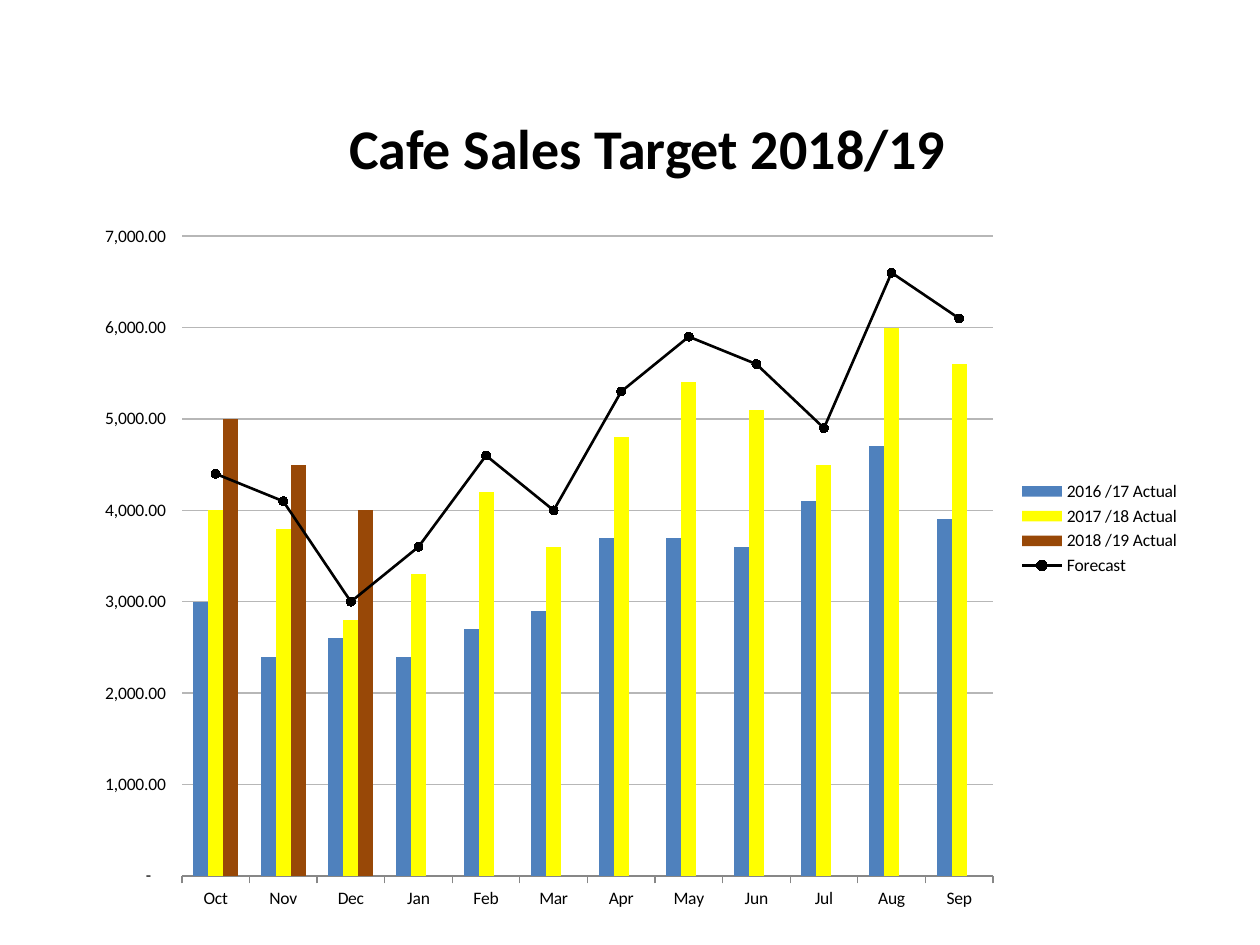
from lxml import etree
from pptx import Presentation
from pptx.chart.data import CategoryChartData
from pptx.dml.color import RGBColor
from pptx.enum import chart as kinds, text
from pptx.oxml import parse_xml
from pptx.oxml.ns import nsdecls, qn
from pptx.util import Pt

BLACK = RGBColor(0x00, 0x00, 0x00)
BLUE = RGBColor(0x4F, 0x81, 0xBD)
YELLOW = RGBColor(0xFF, 0xFF, 0x00)
BROWN = RGBColor(0x98, 0x48, 0x07)
GRID_GREY = RGBColor(0xB7, 0xB7, 0xB7)
AXIS_GREY = RGBColor(0x87, 0x87, 0x87)

FONT = "Calibri"
MONEY = '_-* #,##0.00_-;\\-* #,##0.00_-;_-* "-"??_'
MONTHS = ["Oct", "Nov", "Dec", "Jan", "Feb", "Mar",
          "Apr", "May", "Jun", "Jul", "Aug", "Sep"]
ACTUALS = [
    ("2016 /17 Actual", BLUE,
     [3000, 2400, 2600, 2400, 2700, 2900, 3700, 3700, 3600, 4100, 4700, 3900]),
    ("2017 /18 Actual", YELLOW,
     [4000, 3800, 2800, 3300, 4200, 3600, 4800, 5400, 5100, 4500, 6000, 5600]),
    ("2018 /19 Actual", BROWN, [5000, 4500, 4000] + [None] * 9),
]
FORECAST = [4400, 4100, 3000, 3600, 4600, 4000, 5300, 5900, 5600, 4900, 6600, 6100]


def add_title(page, words):
    box = page.shapes.add_textbox(Pt(152.6), Pt(61.2), Pt(434.9), Pt(46.1))
    frame = box.text_frame
    frame.word_wrap = True
    frame.auto_size = text.MSO_AUTO_SIZE.SHAPE_TO_FIT_TEXT
    frame.text = words
    paragraph = frame.paragraphs[0]
    paragraph.alignment = text.PP_ALIGN.CENTER
    font = paragraph.runs[0].font
    font.name, font.size, font.bold = FONT, Pt(32), True
    font.color.rgb = BLACK


def move_last_series_to_line(chart):
    """Turn the last column series into a line on the same axes."""
    bars = chart.plots[0]._element
    series = bars.findall(qn("c:ser"))[-1]
    for bar_only in series.findall(qn("c:invertIfNegative")):
        series.remove(bar_only)
    line_plot = parse_xml(
        f'<c:lineChart {nsdecls("c")}><c:grouping val="standard"/>'
        '<c:varyColors val="0"/><c:marker val="1"/></c:lineChart>')
    line_plot.insert(2, series)
    for axis in bars.findall(qn("c:axId")):
        etree.SubElement(line_plot, qn("c:axId")).set("val", axis.get("val"))
    bars.addnext(line_plot)


def place_plot_area(chart, **fractions):
    """Fix the inner plot area, as fractions of the chart frame."""
    area = chart.plots[0]._element.getparent()
    for old in area.findall(qn("c:layout")):
        area.remove(old)
    places = "".join(f'<c:{key} val="{value}"/>' for key, value in fractions.items())
    area.insert(0, parse_xml(
        f'<c:layout {nsdecls("c")}><c:manualLayout><c:layoutTarget val="inner"/>'
        '<c:xMode val="edge"/><c:yMode val="edge"/>'
        f'{places}</c:manualLayout></c:layout>'))


def format_axes(chart):
    months, sales = chart.category_axis, chart.value_axis
    months.major_tick_mark = kinds.XL_TICK_MARK.OUTSIDE
    months.format.line.color.rgb = AXIS_GREY
    months.format.line.width = Pt(0.75)
    sales.minimum_scale, sales.maximum_scale, sales.major_unit = 0, 7000, 1000
    sales.major_tick_mark = kinds.XL_TICK_MARK.OUTSIDE
    sales.format.line.fill.background()
    sales.major_gridlines.format.line.color.rgb = GRID_GREY
    sales.major_gridlines.format.line.width = Pt(0.75)
    sales.tick_labels.number_format = MONEY
    sales.tick_labels.number_format_is_linked = False


def format_forecast(line):
    line.smooth = False
    line.format.line.color.rgb = BLACK
    line.format.line.width = Pt(1.5)
    line.marker.style = kinds.XL_MARKER_STYLE.CIRCLE
    line.marker.size = 5
    line.marker.format.fill.solid()
    line.marker.format.fill.fore_color.rgb = BLACK
    line.marker.format.line.color.rgb = BLACK


def add_sales_chart(page):
    data = CategoryChartData()
    data.categories = MONTHS
    for name, _, values in ACTUALS:
        data.add_series(name, values)
    data.add_series("Forecast", FORECAST)
    chart = page.shapes.add_chart(
        kinds.XL_CHART_TYPE.COLUMN_CLUSTERED,
        Pt(46.8), Pt(76.3), Pt(635), Pt(451.4), data).chart
    chart.has_title = False
    chart.font.name, chart.font.size = FONT, Pt(10)
    chart.font.color.rgb = BLACK
    chart.has_legend = True
    chart.legend.position = kinds.XL_LEGEND_POSITION.RIGHT
    chart.legend.include_in_layout = False

    move_last_series_to_line(chart)
    columns, forecast = chart.plots
    columns.gap_width = 150
    columns.vary_by_categories = False
    for series, (_, color, _) in zip(columns.series, ACTUALS):
        series.format.fill.solid()
        series.format.fill.fore_color.rgb = color
    format_forecast(forecast.series[0])
    format_axes(chart)
    place_plot_area(chart, x=0.09, y=0.13, w=0.73, h=0.81)


def main():
    deck = Presentation()
    deck.slide_width, deck.slide_height = Pt(720), Pt(540)
    page = deck.slides.add_slide(deck.slide_layouts[6])
    add_sales_chart(page)
    add_title(page, "Cafe Sales Target 2018/19")
    deck.save("out.pptx")


if __name__ == "__main__":
    main()
